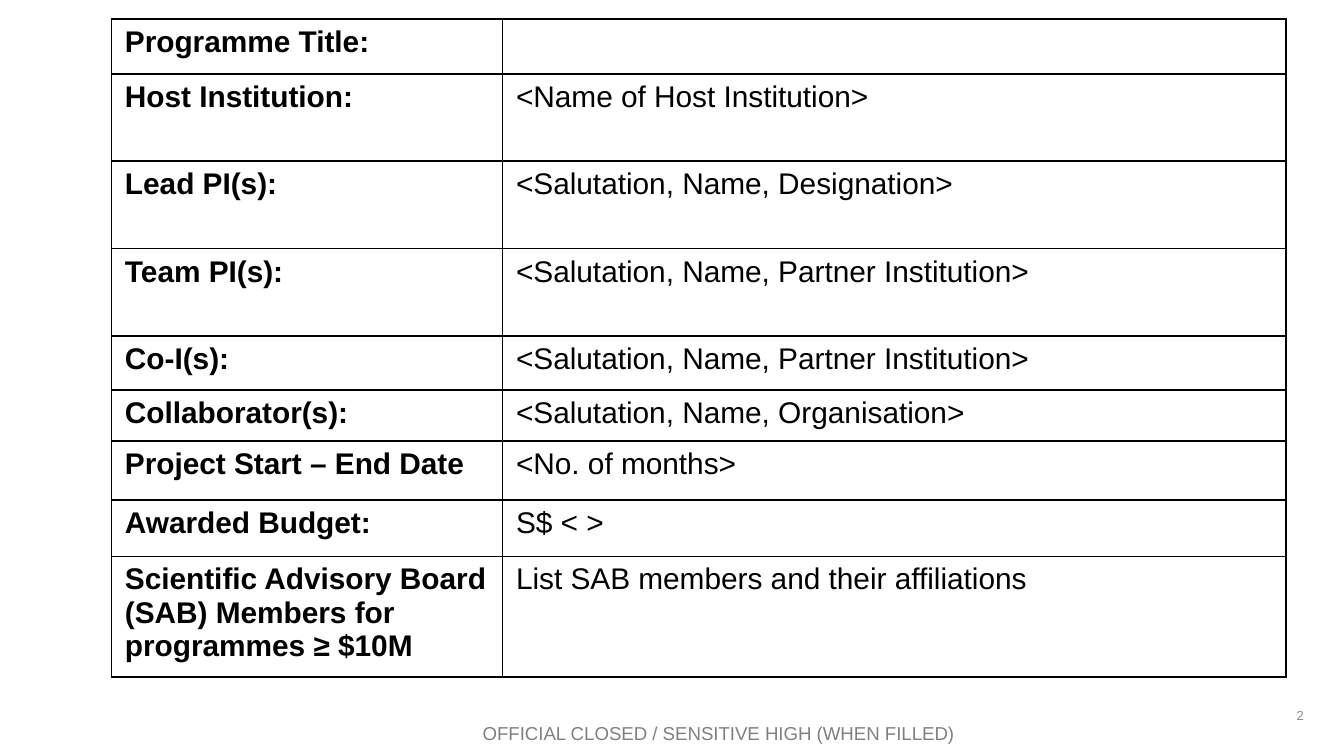
from lxml.etree import SubElement
from pptx import Presentation
from pptx.dml.color import RGBColor
from pptx.enum.text import MSO_ANCHOR, PP_ALIGN
from pptx.oxml.ns import qn
from pptx.util import Inches, Pt

BLACK = RGBColor(0x00, 0x00, 0x00)
GREY = RGBColor(0x80, 0x80, 0x80)
PALE = RGBColor(0x8C, 0x8C, 0x8C)

WIDE = 10
HIGH = WIDE * 9 / 16
COLS = [2.91, 5.83]
ROWS = [
    (0.41, "Programme Title:", ""),
    (0.65, "Host Institution:", "<Name of Host Institution>"),
    (0.65, "Lead PI(s):", "<Salutation, Name, Designation>"),
    (0.65, "Team PI(s):", "<Salutation, Name, Partner Institution>"),
    (0.4, "Co-I(s):", "<Salutation, Name, Partner Institution>"),
    (0.38, "Collaborator(s):", "<Salutation, Name, Organisation>"),
    (0.44, "Project Start – End Date", "<No. of months>"),
    (0.42, "Awarded Budget:", "S$ < >"),
    (0.89, "Scientific Advisory Board (SAB) Members for programmes ≥ $10M",
     "List SAB members and their affiliations"),
]


def write(frame, text, size=16, color=BLACK, bold=False, align=PP_ALIGN.LEFT):
    frame.word_wrap = True
    para = frame.paragraphs[0]
    para.alignment = align
    font = para.font
    if text:
        run = para.add_run()
        run.text = text
        font = run.font
    font.name, font.size, font.bold = "Arial", Pt(size), bold
    font.color.rgb = color


def border(cell, color=BLACK, width=1):
    props = cell._tc.get_or_add_tcPr()
    for side in ("a:lnL", "a:lnR", "a:lnT", "a:lnB"):
        line = SubElement(props, qn(side), w=str(Pt(width)))
        fill = SubElement(line, qn("a:solidFill"))
        SubElement(fill, qn("a:srgbClr"), val=str(color))


def label(slide, box, text, anchor=MSO_ANCHOR.TOP, **style):
    frame = slide.shapes.add_textbox(*map(Inches, box)).text_frame
    frame.vertical_anchor = anchor
    write(frame, text, **style)


def details(slide, box):
    left, top, width, height = map(Inches, box)
    shape = slide.shapes.add_table(len(ROWS), len(COLS), left, top, width, height)
    table = shape.table
    table.first_row = table.horz_banding = False
    for col, share in zip(table.columns, COLS):
        col.width = int(width * share / sum(COLS))
    for row, (high, *texts) in zip(table.rows, ROWS):
        row.height = Inches(high)
        for num, (cell, text) in enumerate(zip(row.cells, texts)):
            border(cell)
            cell.fill.background()
            write(cell.text_frame, text, bold=num == 0)


def footer(slide, box):
    left, top, width, height = box
    # Page number, ending just short of the right edge
    label(slide, (left + width - 2.54, top, 2.33, 0.3), "2",
          MSO_ANCHOR.MIDDLE, size=7, color=PALE, align=PP_ALIGN.RIGHT)
    # Security marking, along the bottom
    label(slide, (left, top + 0.15, width, height - 0.15),
          "OFFICIAL CLOSED / SENSITIVE HIGH (WHEN FILLED)",
          size=10, color=GREY, align=PP_ALIGN.CENTER)


def main():
    deck = Presentation()
    deck.slide_width, deck.slide_height = Inches(WIDE), Inches(HIGH)
    slide = deck.slides.add_slide(deck.slide_layouts[6])
    footer(slide, (0.68, 5.17, 9.33, 0.42))
    details(slide, (0.83, 0.14, sum(COLS), sum(row[0] for row in ROWS)))
    deck.save("out.pptx")


if __name__ == "__main__":
    main()
